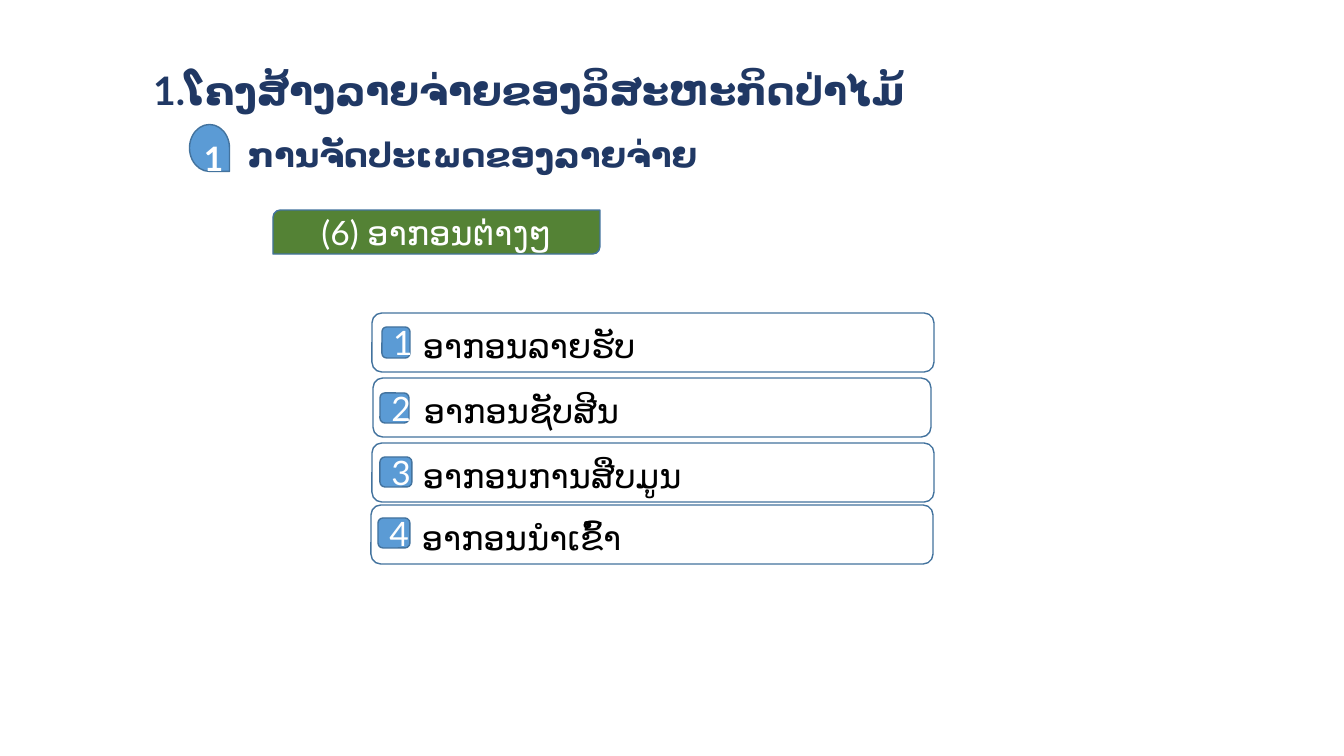
from lxml.etree import SubElement
from pptx import Presentation
from pptx.dml.color import RGBColor
from pptx.enum.shapes import MSO_SHAPE
from pptx.enum.text import MSO_ANCHOR, PP_ALIGN
from pptx.oxml.ns import qn
from pptx.util import Emu, Pt

TITLE = "1.ໂຄງສ້າງລາຍຈ່າຍຂອງວິສະຫະກິດປ່າໄມ້"
SUBTITLE = "ການຈັດປະເພດຂອງລາຍຈ່າຍ"
SECTION_NUMBER = "1"
CATEGORY = "(6) ອາກອນຕ່າງໆ"
TAXES = [
    ("ອາກອນລາຍຮັບ", (372, 313, 562, 59), (382, 327, 28, 31)),
    ("ອາກອນຊັບສີນ", (373, 378, 558, 59), (380, 393, 29, 30)),
    ("ອາກອນການສືບມູນ", (372, 443, 562, 59), (380, 457, 32, 30)),
    ("ອາກອນນຳເຂົ້າ", (371, 505, 562, 59), (378, 518, 32, 30)),
]
FONT = "Lato"
NAVY, BLUE, EDGE, GREEN = "203864", "5B9BD5", "43739E", "548235"
WHITE, BLACK = "FFFFFF", "000000"
PX = 914400 / 100.8


def px(length):
    return Emu(round(length * PX))


def color(value):
    return RGBColor.from_string(value)


def place(shape, at):
    for name, length in zip(("left", "top", "width", "height"), at):
        setattr(shape, name, px(length))


def write(shape, text, ink, size=24, bold=False, anchor=MSO_ANCHOR.MIDDLE, **layout):
    frame = shape.text_frame
    frame.word_wrap = True
    frame.vertical_anchor = anchor
    para = frame.paragraphs[0]
    for name, value in layout.items():
        setattr(para, name, value)
    span = para.add_run()
    span.text = text
    for name, value in {"size": Pt(size), "bold": bold, "name": FONT}.items():
        setattr(span.font, name, value)
    span.font.color.rgb = color(ink)
    SubElement(span.font._element, qn("a:cs"), typeface=FONT)
    return para


def add_label(page, at, text, ink):
    box = page.shapes.add_textbox(*map(px, at))
    write(box, text, ink, bold=True, anchor=MSO_ANCHOR.TOP)


def add_panel(page, kind, at, fill):
    panel = page.shapes.add_shape(kind, *map(px, at))
    panel.shadow.inherit = False
    panel.fill.solid()
    panel.fill.fore_color.rgb = color(fill)
    panel.line.color.rgb = color(EDGE)
    panel.line.width = Pt(1)
    return panel


def main():
    """Build the slide on the types of tax paid by a forest enterprise."""
    deck = Presentation()
    deck.slide_width, deck.slide_height = px(1344), px(756)
    page = deck.slides.add_slide(deck.slide_layouts[5])

    title = page.shapes.title
    place(title, (143, 61, 1102, 45))
    write(title, TITLE, NAVY, 28, True, MSO_ANCHOR.TOP, alignment=PP_ALIGN.LEFT)
    add_label(page, (238, 129, 529, 45), SUBTITLE, NAVY)

    drop = add_panel(page, MSO_SHAPE.TEAR, (186, 128, 47, 40), BLUE)
    drop.rotation = 90
    add_label(page, (194, 133, 40, 50), SECTION_NUMBER, WHITE)

    banner = add_panel(page, MSO_SHAPE.ROUND_2_DIAG_RECTANGLE, (273, 210, 327, 44), GREEN)
    write(banner, CATEGORY, WHITE, alignment=PP_ALIGN.CENTER)

    for number, (tax, row_at, badge_at) in enumerate(TAXES, 1):
        row = add_panel(page, MSO_SHAPE.ROUNDED_RECTANGLE, row_at, WHITE)
        para = write(row, tax, BLACK, alignment=PP_ALIGN.LEFT,
                     line_spacing=1.15, space_after=Pt(3))
        para._p.get_or_add_pPr().set("indent", str(px(38)))
        badge = add_panel(page, MSO_SHAPE.ROUNDED_RECTANGLE, badge_at, BLUE)
        write(badge, str(number), WHITE, alignment=PP_ALIGN.CENTER)

    deck.save("out.pptx")


if __name__ == "__main__":
    main()
